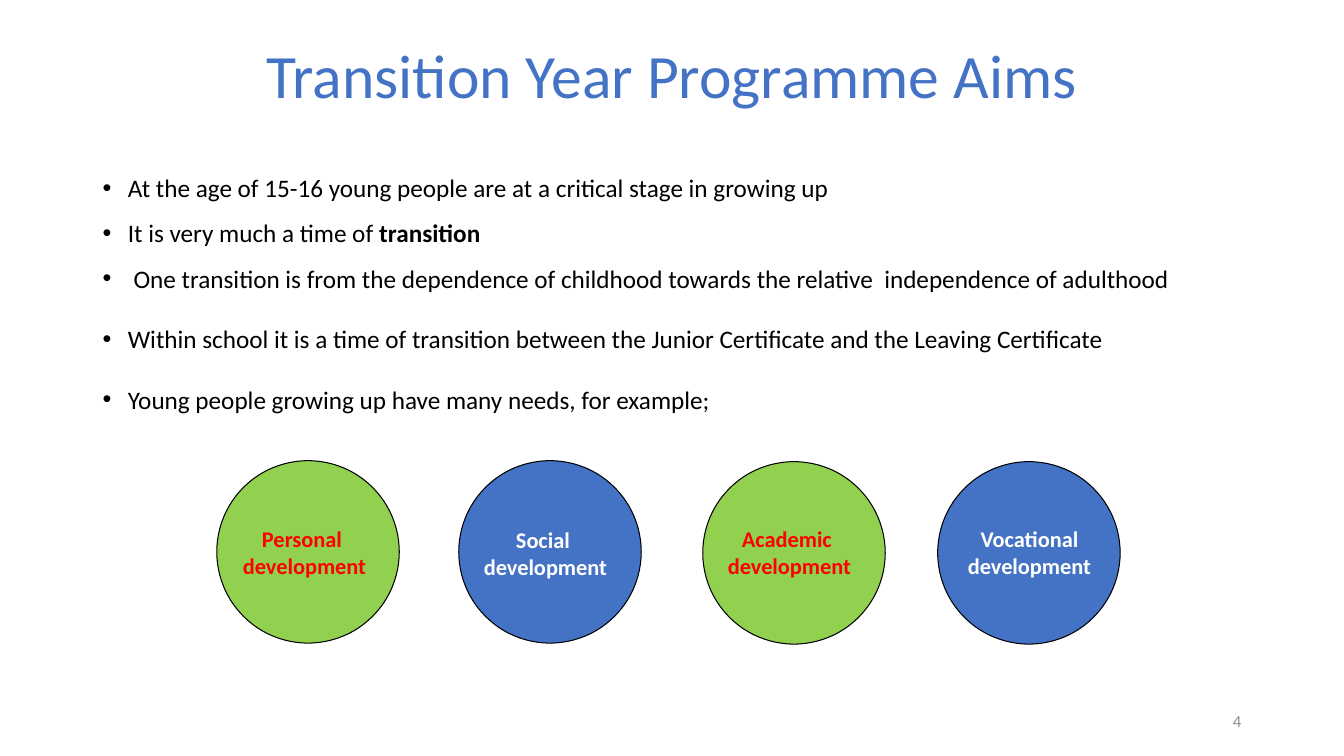
from pptx import Presentation
from pptx.dml.color import RGBColor
from pptx.enum.shapes import MSO_SHAPE
from pptx.enum.text import MSO_ANCHOR, PP_ALIGN
from pptx.oxml.ns import qn
from pptx.util import Inches, Pt

OVAL = MSO_SHAPE.OVAL
TOP, MIDDLE = MSO_ANCHOR.TOP, MSO_ANCHOR.MIDDLE
CENTER, JUSTIFY, RIGHT = PP_ALIGN.CENTER, PP_ALIGN.JUSTIFY, PP_ALIGN.RIGHT

BLUE = RGBColor(0x44, 0x72, 0xC4)
GREEN = RGBColor(0x92, 0xD0, 0x50)
RED = RGBColor(0xFF, 0x00, 0x00)
WHITE = RGBColor(0xFF, 0xFF, 0xFF)
BLACK = RGBColor(0x00, 0x00, 0x00)
GREY = RGBColor(0x8C, 0x8C, 0x8C)

FONT = "Calibri"
WIDTH, HEIGHT = 13.33, 7.5
MARGIN = 0.92
CONTENT = WIDTH - 2 * MARGIN
DIAMETER = 1.81
LABEL_WIDTH, LABEL_HEIGHT = 1.44, 0.64

AIMS = [
    (1.5, [("At the age of 15-16 young people are at a critical stage in growing up", False)]),
    (1.5, [("It is very much a time of ", False), ("transition", True)]),
    (1.5, [(" One transition is from the dependence of childhood towards the relative  "
            "independence of adulthood", False)]),
    (2.0, [("Within school it is a time of transition between the Junior Certificate "
            "and the Leaving Certificate", False)]),
    (2.0, [("Young people growing up have many needs, for example; ", False)]),
]

NEEDS = [
    ("Personal ", 2.15, 4.57, 2.3, 5.16, GREEN, RED),
    ("Social ", 4.55, 4.57, 4.69, 5.17, BLUE, WHITE),
    ("Academic ", 6.97, 4.58, 7.11, 5.16, GREEN, RED),
    ("Vocational", 9.3, 4.58, 9.49, 5.16, BLUE, WHITE),
]


def add_box(page, left, top, width, height, anchor=TOP, wrap=True):
    box = page.shapes.add_textbox(Inches(left), Inches(top), Inches(width), Inches(height))
    frame = box.text_frame
    frame.word_wrap = wrap
    frame.vertical_anchor = anchor
    return frame


def add_para(frame, index, align, spacing=1.0):
    para = frame.paragraphs[0] if index == 0 else frame.add_paragraph()
    para.alignment = align
    para.line_spacing = spacing
    return para


def add_run(para, text, size, color, bold=False):
    run = para.add_run()
    run.text = text
    run.font.name = FONT
    run.font.size = Pt(size)
    run.font.bold = bold
    run.font.color.rgb = color


def add_bullet(para):
    properties = para._p.get_or_add_pPr()
    properties.set("marL", str(Inches(0.25)))
    properties.set("indent", str(Inches(-0.25)))
    font = properties.makeelement(qn("a:buFont"), {"typeface": "Arial"})
    mark = properties.makeelement(qn("a:buChar"), {"char": "•"})
    properties.extend([font, mark])


def add_line(page, text, left, top, width, height, align, anchor, size, color, spacing=1.0):
    frame = add_box(page, left, top, width, height, anchor)
    add_run(add_para(frame, 0, align, spacing), text, size, color)


def add_aims(page):
    frame = add_box(page, MARGIN, 1.51, 12.03, 5.37)
    for index, (spacing, pieces) in enumerate(AIMS):
        para = add_para(frame, index, JUSTIFY, spacing)
        add_bullet(para)
        for text, bold in pieces:
            add_run(para, text, 18, BLACK, bold)


def add_circle(page, left, top, fill):
    circle = page.shapes.add_shape(OVAL, Inches(left), Inches(top),
                                   Inches(DIAMETER), Inches(DIAMETER))
    circle.shadow.inherit = False
    circle.fill.solid()
    circle.fill.fore_color.rgb = fill
    circle.line.color.rgb = BLACK
    circle.line.width = Pt(0.75)


def add_label(page, need, left, top, color):
    frame = add_box(page, left, top, LABEL_WIDTH, LABEL_HEIGHT, wrap=False)
    for index, text in enumerate([need, "development"]):
        add_run(add_para(frame, index, CENTER), text, 16, color, True)


def main():
    deck = Presentation()
    deck.slide_width, deck.slide_height = Inches(WIDTH), Inches(HEIGHT)
    page = deck.slides.add_slide(deck.slide_layouts[6])
    add_line(page, "Transition Year Programme Aims", MARGIN, 0.4, CONTENT, 1.45,
             CENTER, TOP, 44, BLUE, 0.9)
    add_aims(page)
    add_line(page, "4", WIDTH - MARGIN - 3, 6.95, 3, 0.4, RIGHT, MIDDLE, 12, GREY)
    for need, left, top, label_left, label_top, fill, color in NEEDS:
        add_circle(page, left, top, fill)
        add_label(page, need, label_left, label_top, color)
    deck.save("out.pptx")


if __name__ == "__main__":
    main()
